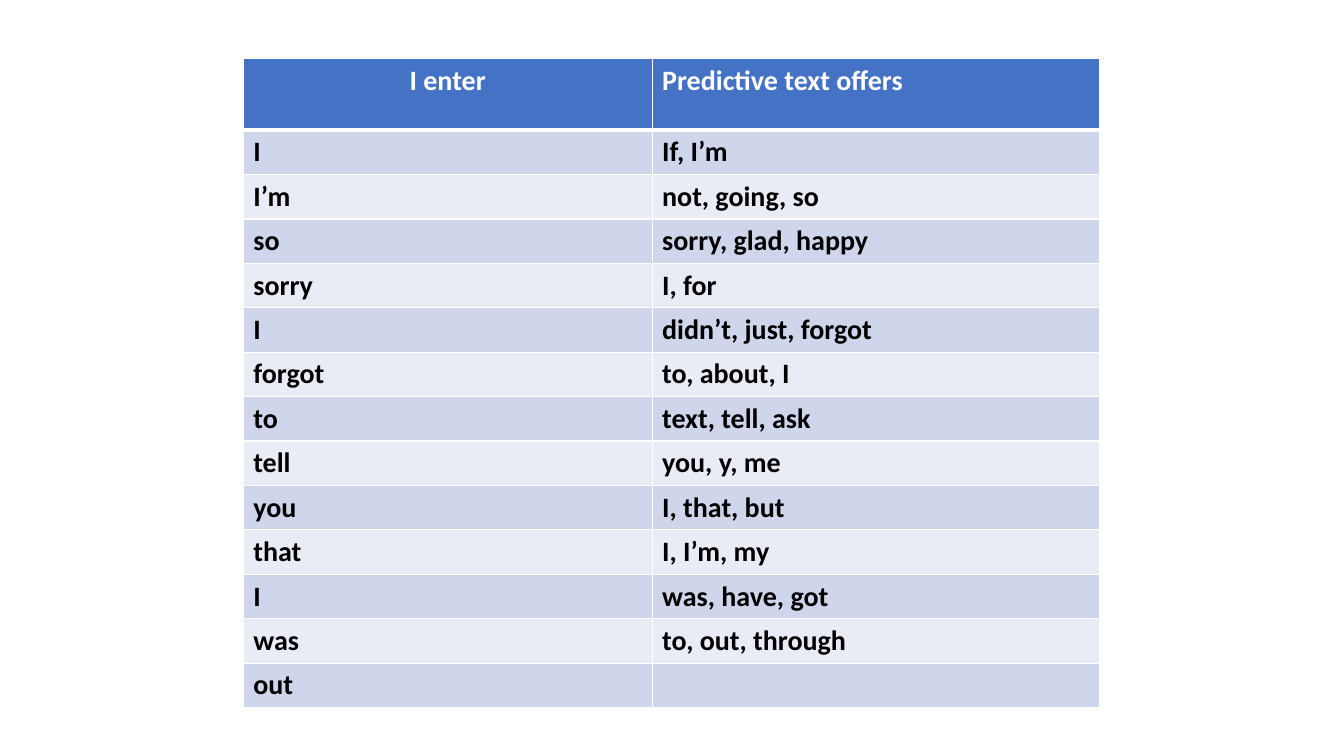
from pptx import Presentation
from pptx.dml.color import RGBColor
from pptx.enum.text import PP_ALIGN
from pptx.oxml.ns import qn
from pptx.util import Pt
from lxml import etree

CENTER, LEFT = PP_ALIGN.CENTER, PP_ALIGN.LEFT

# Content
ROWS = [
    ("I enter", "Predictive text offers"),
    ("I", "If, I’m"),
    ("I’m", "not, going, so"),
    ("so", "sorry, glad, happy"),
    ("sorry", "I, for"),
    ("I", "didn’t, just, forgot"),
    ("forgot", "to, about, I"),
    ("to", "text, tell, ask"),
    ("tell", "you, y, me"),
    ("you", "I, that, but"),
    ("that", "I, I’m, my"),
    ("I", "was, have, got"),
    ("was", "to, out, through"),
    ("out", ""),
]

# Layout and colours
TABLE_LEFT, TABLE_TOP, TABLE_HEIGHT = 173.8, 42, 456.5
COLUMN_WIDTHS = (292, 320)
HEADER_HEIGHT, ROW_HEIGHT = 51, 29.5
HEADER_FILL, BANDS = "4472C4", ("CFD5EA", "E9EBF5")
WHITE, BLACK = "FFFFFF", "000000"


def color(value):
    return RGBColor.from_string(value)


def add_border(cell, side, width):
    line = etree.SubElement(cell._tc.get_or_add_tcPr(), qn("a:ln" + side), w=str(Pt(width)))
    fill = etree.SubElement(line, qn("a:solidFill"))
    etree.SubElement(fill, qn("a:srgbClr"), val=WHITE)


def fill_cell(cell, text, row, column):
    is_header = row == 0
    for side in "LRTB":
        at_header_edge = (row, side) in ((0, "B"), (1, "T"))
        add_border(cell, side, 3 if at_header_edge else 1)
    cell.fill.solid()
    cell.fill.fore_color.rgb = color(HEADER_FILL if is_header else BANDS[(row - 1) % 2])
    cell.text = text
    para = cell.text_frame.paragraphs[0]
    para.alignment = CENTER if is_header and column == 0 else LEFT
    para.font.name = "Calibri"
    para.font.size = Pt(20)
    para.font.bold = True
    para.font.color.rgb = color(WHITE if is_header else BLACK)


deck = Presentation()
deck.slide_width, deck.slide_height = Pt(960), Pt(540)
page = deck.slides.add_slide(deck.slide_layouts[6])

# Table
frame = page.shapes.add_table(
    len(ROWS), len(COLUMN_WIDTHS), Pt(TABLE_LEFT), Pt(TABLE_TOP),
    Pt(sum(COLUMN_WIDTHS)), Pt(TABLE_HEIGHT))
table = frame.table
for column, width in enumerate(COLUMN_WIDTHS):
    table.columns[column].width = Pt(width)
for row, texts in enumerate(ROWS):
    table.rows[row].height = Pt(ROW_HEIGHT if row else HEADER_HEIGHT)
    for column, text in enumerate(texts):
        fill_cell(table.cell(row, column), text, row, column)
frame.height = Pt(TABLE_HEIGHT)

deck.save("out.pptx")
